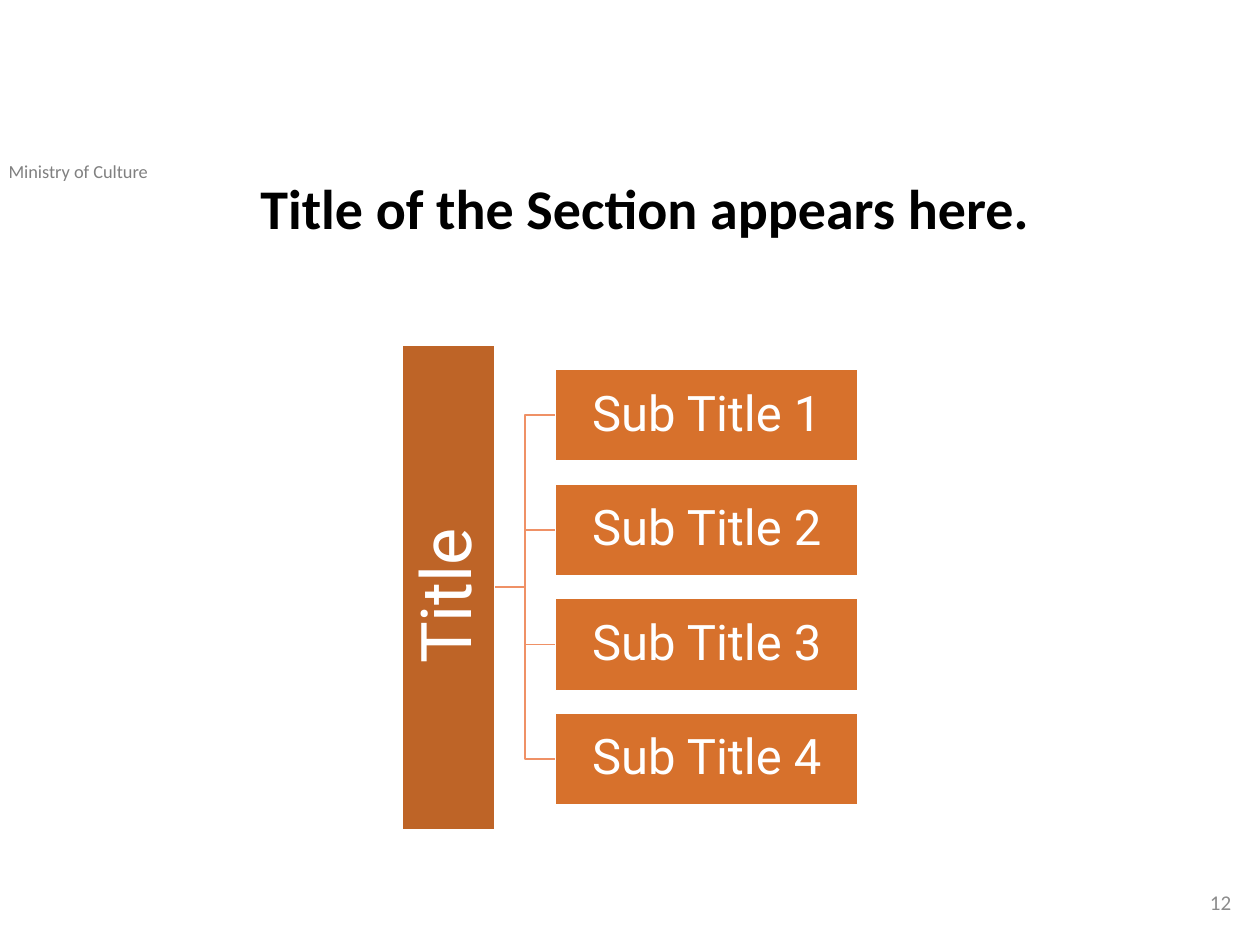
from pptx import Presentation
from pptx.dml.color import RGBColor
from pptx.enum.shapes import MSO_SHAPE
from pptx.enum.text import MSO_ANCHOR, PP_ALIGN
from pptx.util import Inches, Pt

RECTANGLE = MSO_SHAPE.RECTANGLE
TOP, MIDDLE = MSO_ANCHOR.TOP, MSO_ANCHOR.MIDDLE
LEFT, CENTER, RIGHT = PP_ALIGN.LEFT, PP_ALIGN.CENTER, PP_ALIGN.RIGHT

BLACK = RGBColor(0x00, 0x00, 0x00)
WHITE = RGBColor(0xFF, 0xFF, 0xFF)
HEADER_GRAY = RGBColor(0x80, 0x80, 0x80)
NUMBER_GRAY = RGBColor(0x8C, 0x8C, 0x8C)
DARK_ORANGE = RGBColor(0xBE, 0x64, 0x27)
ORANGE = RGBColor(0xD7, 0x71, 0x2C)
BRANCH_ORANGE = RGBColor(0xEF, 0x91, 0x66)

TITLE_ONLY_LAYOUT = 5
SUBTITLES = ["Sub Title 1", "Sub Title 2", "Sub Title 3", "Sub Title 4"]


class SlideBuilder:
    text_font = "Calibri"
    diagram_font = "Roboto"
    line_width = Pt(1)

    def __init__(self, presentation):
        layout = presentation.slide_layouts[TITLE_ONLY_LAYOUT]
        self.slide = presentation.slides.add_slide(layout)

    def set_text(self, frame, text, font_name, size, color, align, anchor):
        frame.word_wrap = True
        frame.vertical_anchor = anchor
        paragraph = frame.paragraphs[0]
        paragraph.text = text
        paragraph.alignment = align
        paragraph.font.name = font_name
        paragraph.font.size = Pt(size)
        paragraph.font.color.rgb = color
        return paragraph

    def title(self, text, left, top, width, height):
        title = self.slide.shapes.title
        title.left, title.top = Inches(left), Inches(top)
        title.width, title.height = Inches(width), Inches(height)
        paragraph = self.set_text(title.text_frame, text, self.text_font, 32,
                                  BLACK, CENTER, TOP)
        paragraph.font.bold = True
        paragraph.line_spacing = 0.9

    def label(self, text, left, top, width, height, size, color, align, anchor):
        label = self.slide.shapes.add_textbox(
            Inches(left), Inches(top), Inches(width), Inches(height))
        self.set_text(label.text_frame, text, self.text_font, size, color,
                      align, anchor)

    def box(self, text, left, top, width, height, size, fill, rotation=0):
        box = self.slide.shapes.add_shape(
            RECTANGLE, Inches(left), Inches(top), Inches(width), Inches(height))
        box.rotation = rotation
        box.shadow.inherit = False
        box.fill.solid()
        box.fill.fore_color.rgb = fill
        box.line.color.rgb = WHITE
        box.line.width = self.line_width
        frame = box.text_frame
        frame.margin_left = frame.margin_right = Inches(0.02)
        frame.margin_top = frame.margin_bottom = Inches(0.02)
        paragraph = self.set_text(frame, text, self.diagram_font, size, WHITE,
                                  CENTER, MIDDLE)
        paragraph.line_spacing = 0.9

    def branch(self, start_x, start_y, end_x, end_y):
        """Draw an open elbow line that turns halfway across."""
        middle_x = (start_x + end_x) / 2
        builder = self.slide.shapes.build_freeform(Inches(start_x), Inches(start_y))
        corners = [(middle_x, start_y), (middle_x, end_y), (end_x, end_y)]
        builder.add_line_segments(
            [(Inches(x), Inches(y)) for x, y in corners], close=False)
        branch = builder.convert_to_shape()
        branch.shadow.inherit = False
        branch.fill.background()
        branch.line.color.rgb = BRANCH_ORANGE
        branch.line.width = self.line_width

    def hierarchy(self, root, children):
        """Draw a root box turned on its side, with its children at the right."""
        root_length, thickness = 3.85, 0.73
        root_center_x, center_y = 3.56, 4.66
        root_right = root_center_x + thickness / 2
        child_left, child_width, pitch = 4.41, 2.4, 0.91
        first_y = center_y - pitch * (len(children) - 1) / 2
        child_centers = [first_y + pitch * index for index in range(len(children))]

        for child_y in child_centers:
            self.branch(root_right, center_y, child_left, child_y)
        self.box(root, root_center_x - root_length / 2, center_y - thickness / 2,
                 root_length, thickness, 40, DARK_ORANGE, rotation=270)
        for child, child_y in zip(children, child_centers):
            self.box(child, child_left, child_y - thickness / 2,
                     child_width, thickness, 28, ORANGE)


def main():
    presentation = Presentation()
    presentation.slide_width, presentation.slide_height = Inches(10), Inches(7.5)
    builder = SlideBuilder(presentation)
    builder.label("Ministry of Culture", -0.03, 1.22, 2.18, 0.28,
                  10.5, HEADER_GRAY, LEFT, TOP)
    builder.label("12", 7.62, 6.96, 2.25, 0.4, 12, NUMBER_GRAY, RIGHT, MIDDLE)
    builder.hierarchy("Title ", SUBTITLES)
    builder.title("Title of the Section appears here.", 1.93, 1.39, 6.38, 0.79)
    presentation.save("out.pptx")


if __name__ == "__main__":
    main()
